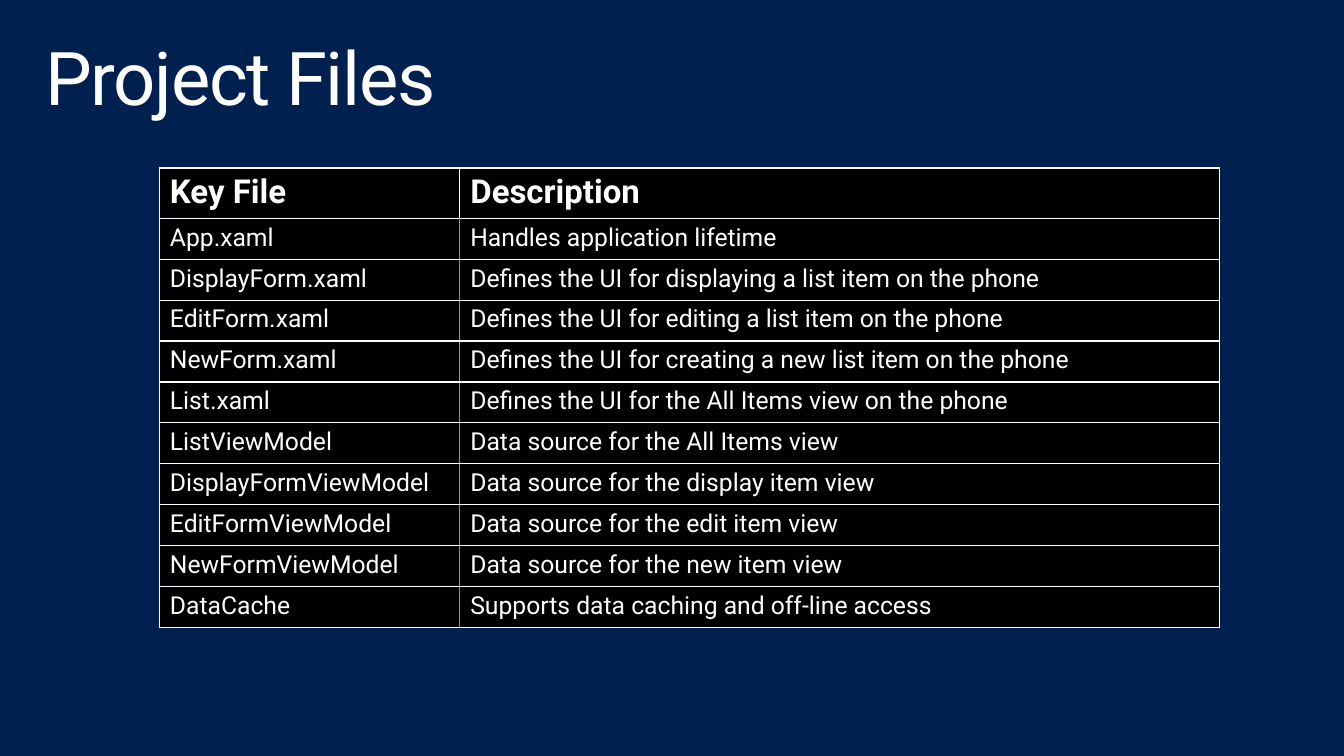
from lxml import etree
from pptx import Presentation
from pptx.dml.color import RGBColor
from pptx.enum.text import MSO_ANCHOR, MSO_AUTO_SIZE, PP_ALIGN
from pptx.oxml.ns import qn
from pptx.util import Inches, Pt

TOP, NO_FIT, LEFT = MSO_ANCHOR.TOP, MSO_AUTO_SIZE.NONE, PP_ALIGN.LEFT
NAVY, BLACK, WHITE, GREEN = "002050", "000000", "FFFFFF", "7FBA00"

HEADINGS = ("Key File", "Description")
FILES = [
    ("App.xaml", "Handles application lifetime"),
    ("DisplayForm.xaml", "Defines the UI for displaying a list item on the phone"),
    ("EditForm.xaml", "Defines the UI for editing a list item on the phone"),
    ("NewForm.xaml", "Defines the UI for creating a new list item on the phone"),
    ("List.xaml", "Defines the UI for the All Items view on the phone"),
    ("ListViewModel", "Data source for the All Items view"),
    ("DisplayFormViewModel", "Data source for the display item view"),
    ("EditFormViewModel", "Data source for the edit item view"),
    ("NewFormViewModel", "Data source for the new item view"),
    ("DataCache", "Supports data caching and off-line access"),
]


def rgb(value):
    return RGBColor.from_string(value)


class SlideBuilder:
    font = "Roboto"

    def __init__(self, slide):
        self.slide = slide

    def background(self, color):
        fill = self.slide.background.fill
        fill.solid()
        fill.fore_color.rgb = rgb(color)

    def add_text(self, frame, text, size, bold=False):
        paragraph = frame.paragraphs[0]
        paragraph.alignment = LEFT
        run = paragraph.add_run()
        run.text = text
        style = {"name": self.font, "size": Pt(size), "bold": bold}
        for key, value in style.items():
            setattr(run.font, key, value)
        run.font.color.rgb = rgb(WHITE)
        return paragraph, run

    def title(self, text, left, top, width, height):
        heading = self.slide.shapes.title
        place = {"left": left, "top": top, "width": width, "height": height}
        for key, value in place.items():
            setattr(heading, key, Inches(value))
        frame = heading.text_frame
        layout = {"margin_left": Inches(0.16), "margin_right": Inches(0.16),
                  "margin_top": Inches(0.1), "margin_bottom": Inches(0.1),
                  "vertical_anchor": TOP, "word_wrap": True, "auto_size": NO_FIT}
        for key, value in layout.items():
            setattr(frame, key, value)
        paragraph, run = self.add_text(frame, text, 54)
        paragraph.line_spacing = 0.9
        run._r.get_or_add_rPr().set("spc", "-100")

    def borders(self, cell, colors):
        properties = cell._tc.get_or_add_tcPr()
        for side, color in zip("LRTB", colors):
            line = etree.SubElement(properties, qn(f"a:ln{side}"), w=str(Pt(1)))
            fill = etree.SubElement(line, qn("a:solidFill"))
            etree.SubElement(fill, qn("a:srgbClr"), val=color)

    def cell(self, cell, text, size, bold, colors):
        margins = {"margin_left": 0.11, "margin_right": 0.11,
                   "margin_top": 0.05, "margin_bottom": 0.05}
        for key, value in margins.items():
            setattr(cell, key, Inches(value))
        cell.vertical_anchor = TOP
        self.borders(cell, colors)
        cell.fill.solid()
        cell.fill.fore_color.rgb = rgb(BLACK)
        self.add_text(cell.text_frame, text, size, bold)

    def table(self, rows, left, top, widths, height, header_height):
        table = self.slide.shapes.add_table(
            len(rows), len(widths), Inches(left), Inches(top),
            Inches(sum(widths)), Inches(height)).table
        table.horz_banding = False
        for column, width in zip(table.columns, widths):
            column.width = Inches(width)
        body_height = (height - header_height) / (len(rows) - 1)
        for r, texts in enumerate(rows):
            is_header = r == 0
            table.rows[r].height = Inches(header_height if is_header else body_height)
            divider = WHITE if is_header else GREEN
            for c, text in enumerate(texts):
                # The line between the columns turns green below the header
                left_line = divider if c > 0 else WHITE
                right_line = divider if c < len(widths) - 1 else WHITE
                self.cell(table.cell(r, c), text, 24 if is_header else 18,
                          is_header, (left_line, right_line, WHITE, WHITE))


def main():
    deck = Presentation()
    deck.slide_width, deck.slide_height = Inches(13.6), Inches(7.65)
    # Title Only layout
    builder = SlideBuilder(deck.slides.add_slide(deck.slide_layouts[5]))
    builder.background(NAVY)

    # Heading
    builder.title("Project Files", 0.3, 0.32, 13, 1)

    # Key files and what they do
    builder.table([HEADINGS, *FILES], 1.61, 1.7, (3.04, 7.69), 4.65, 0.51)

    deck.save("out.pptx")


if __name__ == "__main__":
    main()
